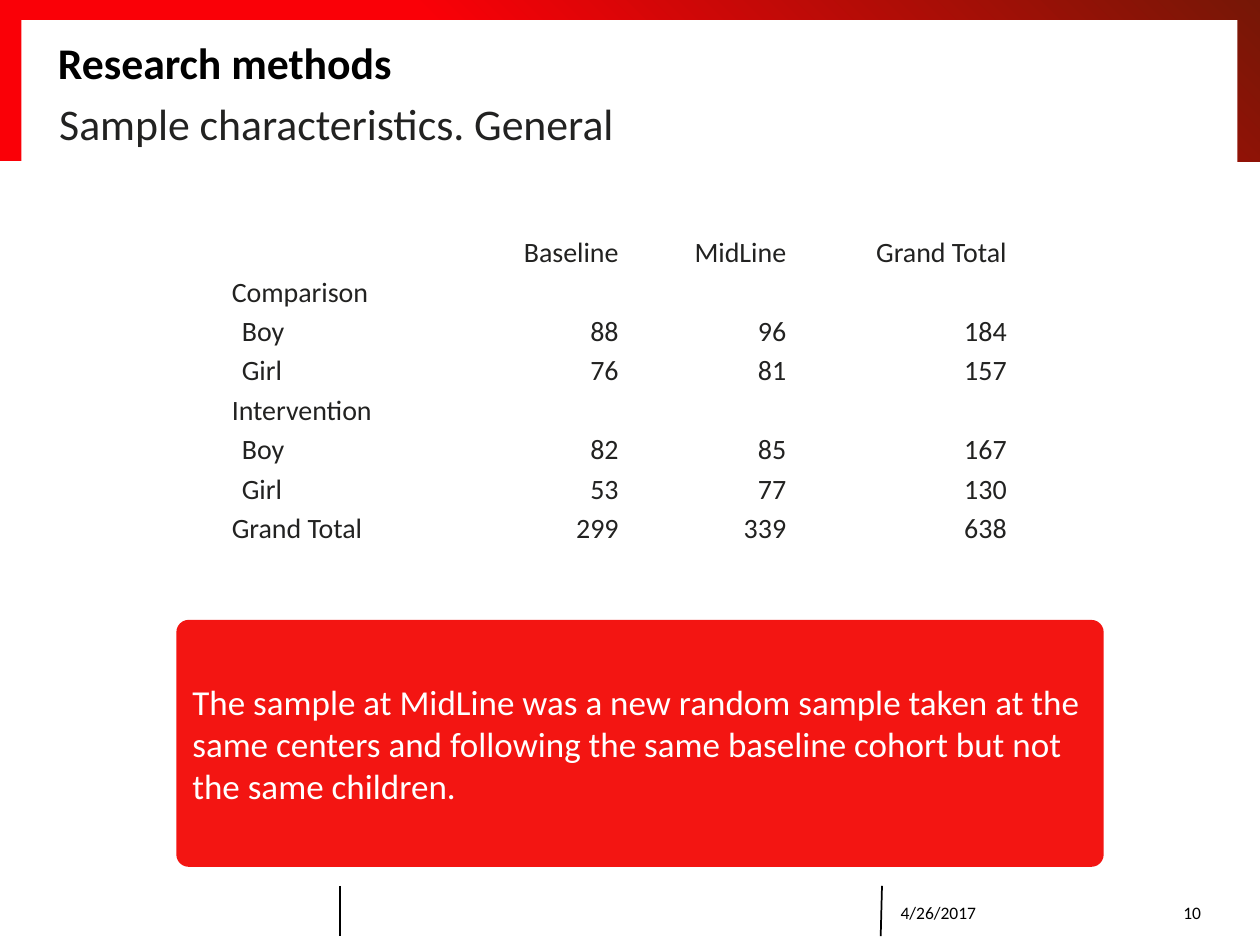
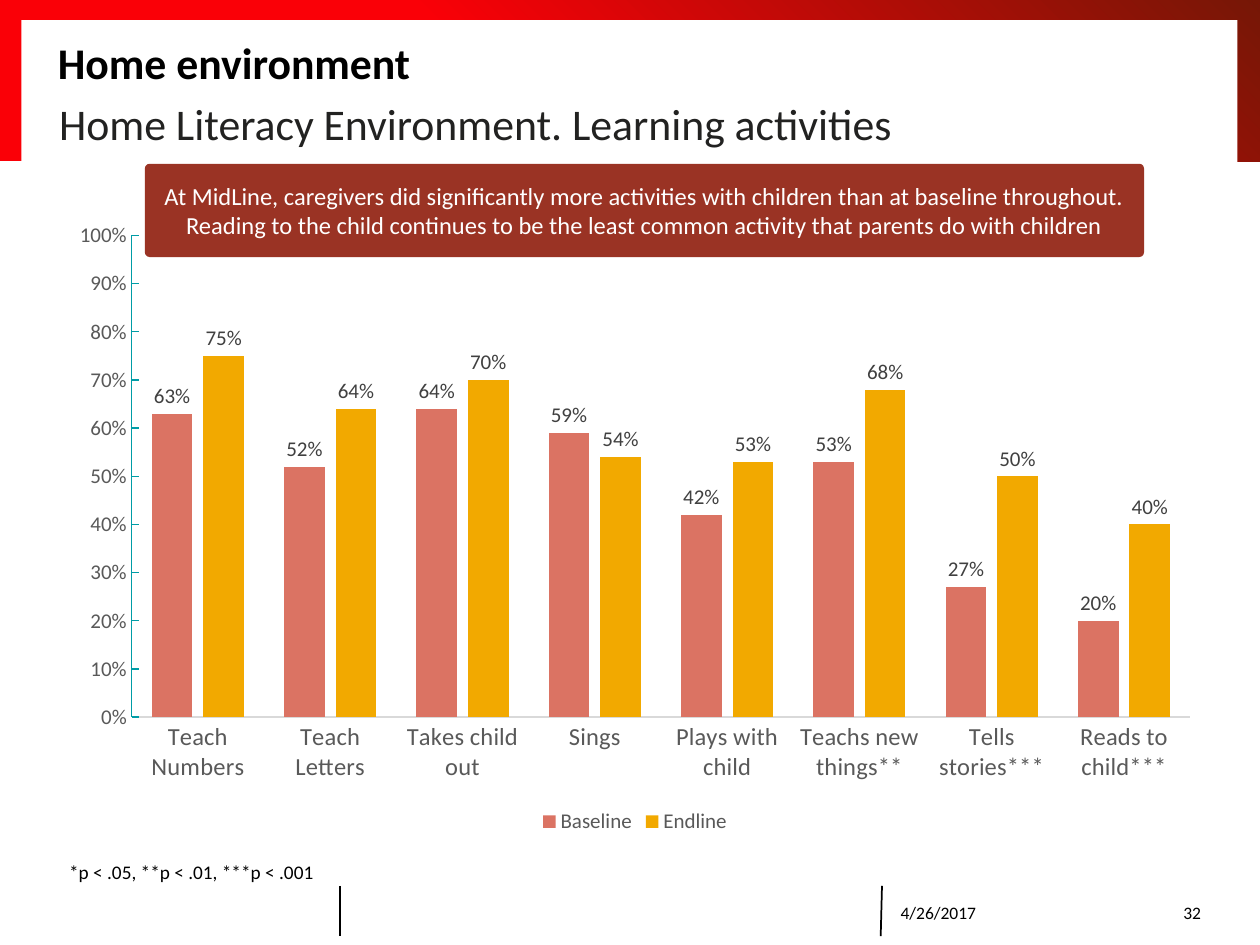
from lxml.etree import SubElement
from pptx import Presentation
from pptx.chart.data import CategoryChartData
from pptx.dml.color import RGBColor
from pptx.enum.chart import XL_CHART_TYPE, XL_LABEL_POSITION, XL_LEGEND_POSITION, XL_TICK_MARK
from pptx.enum.shapes import MSO_CONNECTOR, MSO_SHAPE
from pptx.enum.text import MSO_ANCHOR, MSO_AUTO_SIZE, PP_ALIGN
from pptx.oxml.ns import qn
from pptx.util import Inches, Pt

FONT = "Calibri"
BLACK, WHITE, INK, GREY = "000000", "FFFFFF", "222221", "595959"
BAND_STOPS = [(0.4, "FA0007"), (1, "761706")]
DATE = "4/26/2017"
FOOTER_RULES = [(2.7, 2.7), (7, 6.99)]

SAMPLE = {
    "title": "Research methods",
    "subtitle": "Sample characteristics. General",
    "number": "10",
    "callout": "The sample at MidLine was a new random sample taken at the same centers "
               "and following the same baseline cohort but not the same children.",
}
SAMPLE_COLUMNS = [1.67, 1.42, 1.33, 1.75]
SAMPLE_ROWS = [
    ("", "Baseline", "MidLine", "Grand Total"),
    ("Comparison", "", "", ""),
    ("Boy", "88", "96", "184"),
    ("Girl", "76", "81", "157"),
    ("Intervention", "", "", ""),
    ("Boy", "82", "85", "167"),
    ("Girl", "53", "77", "130"),
    ("Grand Total", "299", "339", "638"),
]
HOME = {
    "title": "Home environment",
    "subtitle": "Home Literacy Environment. Learning activities",
    "number": "32",
    "callout": "At MidLine, caregivers did significantly more activities with children than "
               "at baseline throughout. Reading to the child continues to be the least "
               "common activity that parents do with children",
    "footnote": "*p < .05, **p < .01, ***p < .001",
}
ACTIVITIES = ["Teach Numbers", "Teach Letters", "Takes child out", "Sings", "Plays with child",
              "Teachs new things**", "Tells stories***", "Reads to child***"]
ACTIVITY_SERIES = [
    ("Baseline", "DB7363", [0.63, 0.52, 0.64, 0.59, 0.42, 0.53, 0.27, 0.2]),
    ("Endline", "F2A900", [0.75, 0.64, 0.7, 0.54, 0.53, 0.68, 0.5, 0.4]),
]


def rgb(value):
    return RGBColor.from_string(value)


def style_font(font, size, color, bold=False):
    font.name, font.size, font.bold = FONT, Pt(size), bold
    font.color.rgb = rgb(color)


def write(holder, text, size, color, align=PP_ALIGN.LEFT, bold=False):
    frame = holder.text_frame
    frame.text = text
    paragraph = frame.paragraphs[0]
    paragraph.alignment = align
    for run in paragraph.runs:
        style_font(run.font, size, color, bold)
    return paragraph


def add_panel(slide, box, color=None, kind=MSO_SHAPE.RECTANGLE):
    shape = slide.shapes.add_shape(kind, *map(Inches, box))
    shape.shadow.inherit = False
    shape.line.fill.background()
    if color:
        shape.fill.solid()
        shape.fill.fore_color.rgb = rgb(color)
    return shape


def add_callout(slide, box, color, text, size, align):
    shape = add_panel(slide, box, color, MSO_SHAPE.ROUNDED_RECTANGLE)
    shape.adjustments[0] = 0.05
    shape.text_frame.word_wrap = True
    shape.text_frame.vertical_anchor = MSO_ANCHOR.MIDDLE
    write(shape, text, size, WHITE, align)


def add_label(slide, box, text, size, align=PP_ALIGN.LEFT, wrap=True):
    label = slide.shapes.add_textbox(*map(Inches, box))
    label.text_frame.word_wrap = wrap
    write(label, text, size, BLACK, align)
    return label


def place_heading(slide, placeholder, box, text, color, anchor, bold=False):
    placeholder.left, placeholder.top, placeholder.width, placeholder.height = map(Inches, box)
    frame = placeholder.text_frame
    frame.margin_left = frame.margin_top = frame.margin_right = frame.margin_bottom = 0
    frame.vertical_anchor = anchor
    frame.auto_size = MSO_AUTO_SIZE.NONE
    slide.shapes.element.append(placeholder.element)
    paragraph = write(placeholder, text, 25, color, bold=bold)
    paragraph.space_before = Pt(0)
    return paragraph


def add_base_slide(presentation, content):
    slide = presentation.slides.add_slide(presentation.slide_layouts[1])
    band = add_panel(slide, (0, 0, 10, 1.28))
    band.fill.gradient()
    band.fill.gradient_angle = 45
    for stop, (position, color) in zip(band.fill.gradient_stops, BAND_STOPS):
        stop.position = position
        stop.color.rgb = rgb(color)
    add_panel(slide, (0.17, 0.16, 9.65, 1.18), WHITE)

    for top_x, bottom_x in FOOTER_RULES:
        rule = slide.shapes.add_connector(
            MSO_CONNECTOR.STRAIGHT, *map(Inches, (top_x, 7.03, bottom_x, 7.43)))
        rule.line.color.rgb = rgb(BLACK)
        rule.line.width = Pt(1)
        SubElement(rule.element.spPr, qn("a:effectLst"))

    place_heading(slide, slide.shapes.title, (0.46, 0.22, 9.06, 0.55), content["title"],
                  BLACK, MSO_ANCHOR.MIDDLE, bold=True)
    subtitle = place_heading(slide, slide.placeholders[1], (0.47, 0.77, 9.06, 0.4),
                             content["subtitle"], INK, MSO_ANCHOR.TOP)
    properties = subtitle._p.get_or_add_pPr()
    properties.set("marL", "0")
    properties.set("indent", "0")
    SubElement(properties, qn("a:buNone"))
    subtitle.space_after = Pt(6)

    for box, text, align in [((7.05, 7.04, 1.73, 0.4), DATE, PP_ALIGN.LEFT),
                             ((8.78, 7.04, 0.85, 0.4), content["number"], PP_ALIGN.RIGHT)]:
        footer = add_label(slide, box, text, 10, align)
        footer.text_frame.vertical_anchor = MSO_ANCHOR.MIDDLE
    return slide


def add_sample_table(slide):
    row_height = 0.31
    frame = slide.shapes.add_table(
        len(SAMPLE_ROWS), len(SAMPLE_COLUMNS), Inches(1.83), Inches(1.83),
        Inches(sum(SAMPLE_COLUMNS)), Inches(row_height * len(SAMPLE_ROWS)))
    table = frame.table
    table.first_row = table.horz_banding = False
    for column, width in zip(table.columns, SAMPLE_COLUMNS):
        column.width = Inches(width)
    for row, values in zip(table.rows, SAMPLE_ROWS):
        row.height = Inches(2.51 / len(SAMPLE_ROWS))
        for index, (cell, value) in enumerate(zip(row.cells, values)):
            cell.fill.background()
            cell.vertical_anchor = MSO_ANCHOR.BOTTOM
            cell.margin_left = Inches(0.09 if value in ("Boy", "Girl") else 0.01)
            cell.margin_top = cell.margin_right = Inches(0.01)
            cell.margin_bottom = 0
            write(cell, value, 16, INK, PP_ALIGN.RIGHT if index else PP_ALIGN.LEFT)


def style_axis(axis, size, line_color, tick_mark):
    axis.has_major_gridlines = False
    axis.major_tick_mark = tick_mark
    axis.minor_tick_mark = XL_TICK_MARK.NONE
    axis.format.line.color.rgb = rgb(line_color)
    axis.format.line.width = Pt(0.75)
    style_font(axis.tick_labels.font, size, GREY)


def add_activity_chart(slide):
    data = CategoryChartData(number_format="0%")
    data.categories = ACTIVITIES
    for name, _, values in ACTIVITY_SERIES:
        data.add_series(name, values)
    chart = slide.shapes.add_chart(
        XL_CHART_TYPE.COLUMN_CLUSTERED, *map(Inches, (0.45, 1.67, 9.18, 4.99)), data).chart
    style_font(chart.font, 10, BLACK)
    chart.has_title = False
    chart.has_legend = True
    chart.legend.position = XL_LEGEND_POSITION.BOTTOM
    chart.legend.include_in_layout = False
    style_font(chart.legend.font, 12, GREY)

    style_axis(chart.category_axis, 14, "D9D9D9", XL_TICK_MARK.NONE)
    value_axis = chart.value_axis
    style_axis(value_axis, 12, "009CA6", XL_TICK_MARK.INSIDE)
    value_axis.minimum_scale, value_axis.maximum_scale, value_axis.major_unit = 0, 1, 0.1
    value_axis.tick_labels.number_format = "0%"
    value_axis.tick_labels.number_format_is_linked = False

    plot = chart.plots[0]
    plot.vary_by_categories = False
    plot.gap_width, plot.overlap = 99, -27
    for series, (_, color, _) in zip(plot.series, ACTIVITY_SERIES):
        series.format.fill.solid()
        series.format.fill.fore_color.rgb = rgb(color)
        labels = series.data_labels
        labels.show_value = True
        labels.position = XL_LABEL_POSITION.OUTSIDE_END
        labels.number_format = "0%"
        labels.number_format_is_linked = False
        style_font(labels.font, 12, "404040")


def main():
    """Build the sample and home environment slides."""
    presentation = Presentation()
    presentation.slide_width, presentation.slide_height = Inches(10), Inches(7.5)

    sample_slide = add_base_slide(presentation, SAMPLE)
    add_callout(sample_slide, (1.4, 4.92, 7.36, 1.96), "F31512", SAMPLE["callout"], 20,
                PP_ALIGN.LEFT)
    add_sample_table(sample_slide)

    home_slide = add_base_slide(presentation, HOME)
    add_activity_chart(home_slide)
    add_callout(home_slide, (1.15, 1.3, 7.93, 0.74), "9A3324", HOME["callout"], 14,
                PP_ALIGN.CENTER)
    add_label(home_slide, (0.45, 6.78, 2.18, 0.29), HOME["footnote"], 11, wrap=False)

    presentation.save("out.pptx")


if __name__ == "__main__":
    main()
